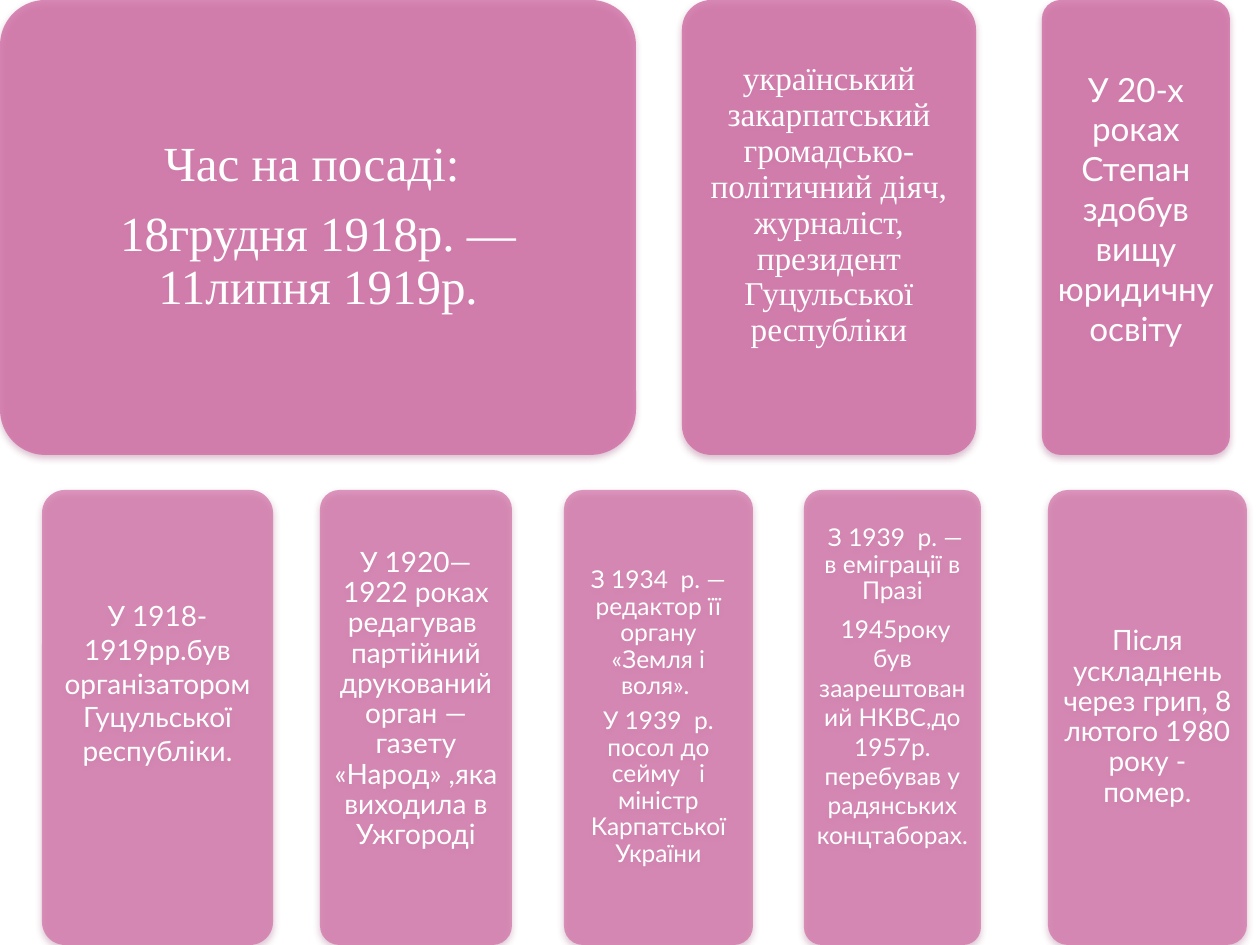
from lxml import etree
from pptx import Presentation
from pptx import util as u
from pptx.dml.color import RGBColor
from pptx.enum import shapes, text
from pptx.oxml.ns import qn

EMU_PER_PX = u.Inches(1) / 126
CARD_HEIGHT = 455
PINK, SHADOW, WHITE = "CF6DA4", "893263", "FFFFFF"
SERIF, SANS = "Times New Roman", "Lato"
TIGHT, NORMAL = 0.9, 1.0

# Row: top, fill opacity in percent, cards.
# Card: left, width, inset, extra bottom inset, font, size, paragraphs with line spacing.
ROWS = [
    (0, 80, [
        (0, 636, 15, 0, SERIF, 28, [
            ("Час на посаді: ", TIGHT),
            ("18грудня 1918р. — 11липня 1919р.", TIGHT)]),
        (682, 294, 10, 44, SERIF, 19, [
            ("український закарпатський громадсько-політичний діяч, журналіст, "
             "президент Гуцульської республіки", TIGHT)]),
        (1042, 188, 10, 38, SANS, 19, [
            ("У 20-х роках Степан здобув вищу юридичну освіту", NORMAL)]),
    ]),
    (490, 70, [
        (42, 231, 9, 69, SANS, 16, [
            ("У 1918-1919рр.був організатором", NORMAL),
            ("Гуцульської республіки.", NORMAL)]),
        (320, 192, 9, 36, SANS, 16, [
            ("У 1920—1922 роках редагував  партійний друкований орган — газету "
             "«Народ» ,яка виходила в Ужгороді", TIGHT)]),
        (564, 189, 8, 0, SANS, 14, [
            ("З 1934  р. — редактор її органу «Земля і воля». ", TIGHT),
            ("У 1939  р. посол до сейму   і міністр Карпатської України", TIGHT)]),
        (804, 177, 6, 60, SANS, 14, [
            (" З 1939  р. — в еміграції в Празі", TIGHT),
            (" 1945року був заарештований НКВС,до 1957р. перебував у радянських "
             "концтаборах.", NORMAL)]),
        (1048, 199, 9, 0, SANS, 16, [
            ("Після ускладнень через грип, 8 лютого 1980 року - помер.", TIGHT)]),
    ]),
]


def px(length):
    return u.Emu(round(length * EMU_PER_PX))


def colour(value):
    return RGBColor.from_string(value)


def set_all(target, values):
    for name, value in values.items():
        setattr(target, name, value)


def add_alpha(colour_element, percent):
    etree.SubElement(colour_element, qn("a:alpha"), val=str(percent * 1000))


def add_shadow(card):
    card.shadow.inherit = False
    effects = card._element.spPr.find(qn("a:effectLst"))
    outer = etree.SubElement(
        effects, qn("a:outerShdw"), blurRad=str(u.Pt(4)), dist=str(u.Pt(2)),
        dir="5400000", algn="ctr", rotWithShape="0")
    add_alpha(etree.SubElement(outer, qn("a:srgbClr"), val=SHADOW), 38)


def add_card(page, left, top, width, opacity):
    card = page.shapes.add_shape(
        shapes.MSO_SHAPE.ROUNDED_RECTANGLE,
        px(left), px(top), px(width), px(CARD_HEIGHT))
    card.adjustments[0] = 0.1
    card.fill.solid()
    card.fill.fore_color.rgb = colour(PINK)
    add_alpha(card._element.spPr.find(qn("a:solidFill"))[0], opacity)
    card.line.fill.background()
    add_shadow(card)
    return card


def write_text(card, inset, extra_bottom, font, size, paragraphs):
    frame = card.text_frame
    set_all(frame, {
        "word_wrap": True, "vertical_anchor": text.MSO_ANCHOR.MIDDLE,
        "margin_left": px(inset), "margin_right": px(inset),
        "margin_top": px(inset), "margin_bottom": px(inset + extra_bottom)})
    for index, (wording, spacing) in enumerate(paragraphs):
        para = frame.add_paragraph() if index else frame.paragraphs[0]
        after = 0.35 * size if spacing == TIGHT else 0
        set_all(para, {"alignment": text.PP_ALIGN.CENTER,
                       "line_spacing": spacing, "space_after": u.Pt(after)})
        span = para.add_run()
        span.text = wording
        set_all(span.font, {"name": font, "size": u.Pt(size)})
        span.font.color.rgb = colour(WHITE)


def main():
    deck = Presentation()
    set_all(deck, {"slide_width": px(1260), "slide_height": px(945)})
    page = deck.slides.add_slide(deck.slide_layouts[6])
    for top, opacity, cards in ROWS:
        for left, width, *content in cards:
            write_text(add_card(page, left, top, width, opacity), *content)
    deck.save("out.pptx")


if __name__ == "__main__":
    main()
